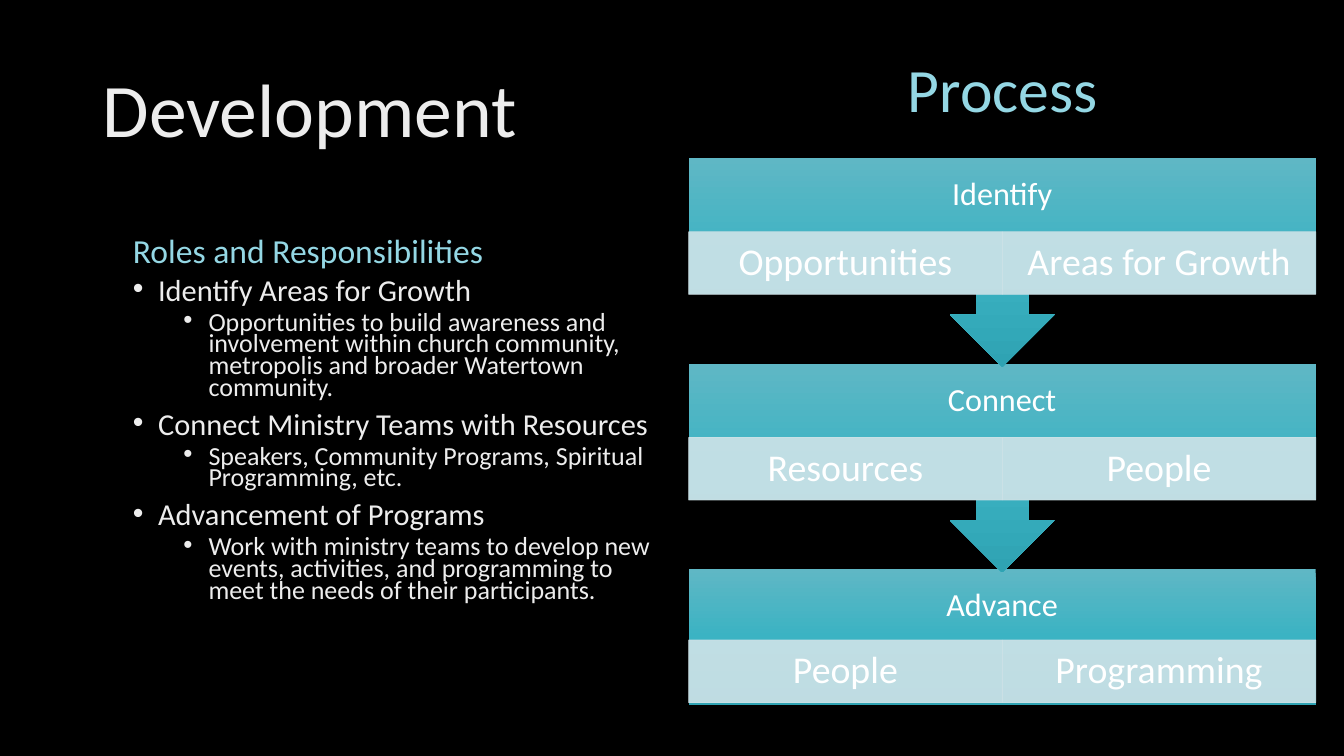
from dataclasses import dataclass
from lxml.etree import SubElement as Sub
from pptx import Presentation
from pptx.dml.color import RGBColor as Rgb
from pptx.enum.shapes import MSO_SHAPE as Kind
from pptx.enum.text import MSO_ANCHOR as Anchor, PP_ALIGN as Align
from pptx.oxml.ns import qn
from pptx.util import Inches, Pt


@dataclass(frozen=True)
class Theme:
    font: str = "Calibri"
    back: str = "000000"
    light: str = "EDEDED"
    aqua: str = "94D7E4"
    white: str = "FFFFFF"
    pale: str = "CFE3E8"
    stops: tuple = ((0, "5FB7C5"), (50, "3BB3C3"), (100, "2FA3B3"))
    title: float = 54
    process: float = 44
    roles: float = 24
    duty: float = 21.7
    detail: float = 18.6
    step: float = 23
    cell: float = 27


THEME = Theme()
DUTIES = [
    ("Identify Areas for Growth",
     "Opportunities to build awareness and involvement within church community, "
     "metropolis and broader Watertown community."),
    ("Connect Ministry Teams with Resources",
     "Speakers, Community Programs, Spiritual Programming, etc."),
    ("Advancement of Programs",
     "Work with ministry teams to develop new events, activities, and programming "
     "to meet the needs of their participants."),
]
STEPS = [
    ("Identify", ("Opportunities", "Areas for Growth")),
    ("Connect", ("Resources", "People")),
    ("Advance", ("People", "Programming")),
]


def apply(item, form):
    for name, value in form.items():
        setattr(item, name, value)


def style(para, text, size, color, **form):
    para.text = text
    apply(para, {"line_spacing": 0.9, **form})
    apply(para.font, {"name": THEME.font, "size": Pt(size)})
    para.font.color.rgb = Rgb.from_string(color)


def frame(shape, anchor, side=0.1, edge=0.05):
    text = shape.text_frame
    apply(text, {
        "word_wrap": True, "vertical_anchor": anchor,
        "margin_left": Inches(side), "margin_right": Inches(side),
        "margin_top": Inches(edge), "margin_bottom": Inches(edge),
    })
    return text


def label(slide, box, text, size, color, anchor, align=Align.LEFT, side=0.1, edge=0.05):
    area = slide.shapes.add_textbox(*map(Inches, box))
    para = frame(area, anchor, side, edge).paragraphs[0]
    style(para, text, size, color, alignment=align)


def bullet(para, left):
    props = para._p.get_or_add_pPr()
    props.set("marL", str(Inches(left)))
    props.set("indent", str(Inches(-0.25)))
    Sub(props, qn("a:buFont"), typeface="Arial")
    Sub(props, qn("a:buChar"), char="•")


def duties(slide, box):
    x, y, w, h = box
    label(slide, (x, y, w, 0.9), "Roles and Responsibilities",
          THEME.roles, THEME.aqua, Anchor.BOTTOM)
    area = slide.shapes.add_textbox(*map(Inches, (x, y + 0.9, w, h - 0.9)))
    text = frame(area, Anchor.TOP)
    for row, pair in enumerate(DUTIES):
        for level, words in enumerate(pair):
            first = row == level == 0
            para = text.paragraphs[0] if first else text.add_paragraph()
            bullet(para, 0.25 + level * 0.5)
            style(para, words, (THEME.duty, THEME.detail)[level], THEME.light,
                  level=level, line_spacing=0.7,
                  space_before=Pt(0 if first else 10 - level * 5))


def shade(shape):
    shape.fill.gradient()
    shape.fill.gradient_angle = 270
    stops = shape._element.spPr.find(qn("a:gradFill")).find(qn("a:gsLst"))
    for stop in list(stops):
        stops.remove(stop)
    for place, color in THEME.stops:
        stop = Sub(stops, qn("a:gs"), pos=str(place * 1000))
        Sub(stop, qn("a:srgbClr"), val=color)


def cell(slide, box, text):
    shape = slide.shapes.add_shape(Kind.RECTANGLE, *map(Inches, box))
    shape.shadow.inherit = False
    shape.line.width = Pt(0.5)
    shape.fill.solid()
    for paint in (shape.fill, shape.line.fill):
        paint.solid()
        paint.fore_color.rgb = Rgb.from_string(THEME.pale)
    for color in shape._element.spPr.iter(qn("a:srgbClr")):
        Sub(color, qn("a:alpha"), val="90000")
    para = frame(shape, Anchor.MIDDLE, 0.21, 0.04).paragraphs[0]
    style(para, text, THEME.cell, THEME.white, alignment=Align.CENTER)


def step(slide, box, name, parts, last):
    x, y, w, h = box
    kind = Kind.RECTANGLE if last else Kind.DOWN_ARROW_CALLOUT
    shape = slide.shapes.add_shape(kind, *map(Inches, box))
    shape.shadow.inherit = False
    shade(shape)
    shape.line.fill.background()
    label(slide, (x, y, w, 0.73), name, THEME.step, THEME.white,
          Anchor.MIDDLE, Align.CENTER, 0.18, 0.18)
    top = y + (0.7 if last else 0.73)
    for col, part in enumerate(parts):
        cell(slide, (x + col * w / 2, top, w / 2, 0.62), part)


def process(slide, box):
    x, y, w, pitch = box
    end = len(STEPS) - 1
    for row in range(end, -1, -1):
        high = 1.34 if row == end else 2.07
        step(slide, (x, y + row * pitch, w, high), *STEPS[row], row == end)


def main():
    deck = Presentation()
    apply(deck, {"slide_width": Inches(13.33), "slide_height": Inches(7.5)})
    slide = deck.slides.add_slide(deck.slide_layouts[6])
    fill = slide.background.fill
    fill.solid()
    fill.fore_color.rgb = Rgb.from_string(THEME.back)
    label(slide, (0.92, 0.4, 11.5, 1.45), "Development",
          THEME.title, THEME.light, Anchor.MIDDLE)
    duties(slide, (1.22, 1.84, 5.5, 4.93))
    label(slide, (7.19, 0.4, 5.51, 0.9), "Process",
          THEME.process, THEME.aqua, Anchor.BOTTOM, Align.CENTER)
    process(slide, (6.83, 1.57, 6.22, 2.04))
    deck.save("out.pptx")


if __name__ == "__main__":
    main()
